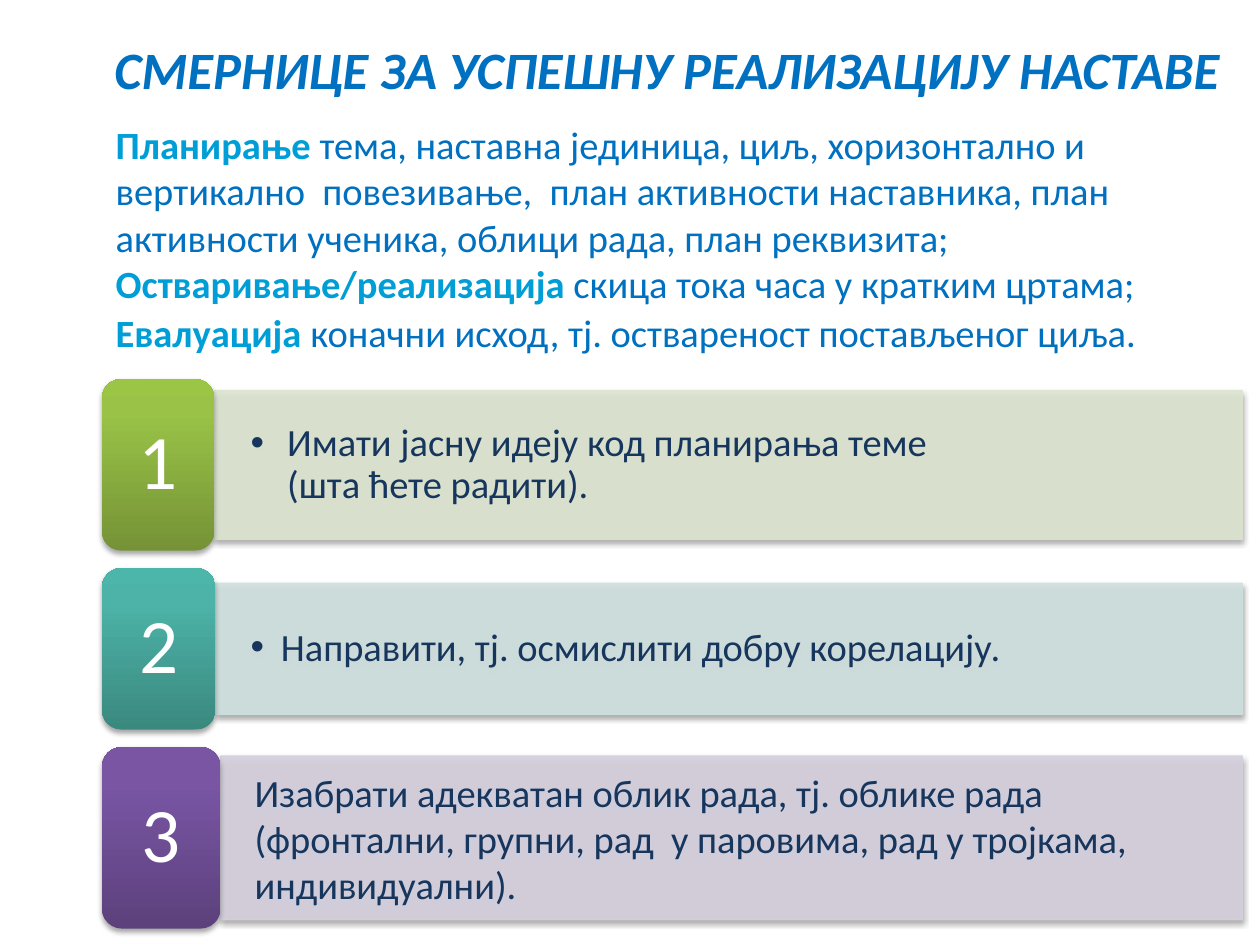
from lxml import etree
from pptx import Presentation
from pptx.dml.color import RGBColor
from pptx.enum.shapes import MSO_SHAPE
from pptx.enum.text import MSO_ANCHOR, PP_ALIGN
from pptx.oxml.ns import qn
from pptx.util import Inches, Pt

RECT = MSO_SHAPE.RECTANGLE
ROUNDED = MSO_SHAPE.ROUNDED_RECTANGLE
MIDDLE = MSO_ANCHOR.MIDDLE
LEFT = PP_ALIGN.LEFT
CENTER = PP_ALIGN.CENTER

BLUE, CYAN, NAVY, WHITE = "0070C0", "009ED6", "17365D", "FFFFFF"


def rgb(value):
    return RGBColor.from_string(value)


def add_xml(parent, tag, **attrs):
    return etree.SubElement(parent, qn(tag), {k: str(v) for k, v in attrs.items()})


class Deck:
    font = "Calibri"
    body_size = 22
    number_size = 44

    def __init__(self, width, height):
        self.prs = Presentation()
        self.prs.slide_width = Inches(width)
        self.prs.slide_height = Inches(height)
        self.s = self.prs.slides.add_slide(self.prs.slide_layouts[6])

    def frame(self, sp, inset_x, inset_y):
        tf = sp.text_frame
        tf.word_wrap = True
        tf.vertical_anchor = MIDDLE
        tf.margin_left = tf.margin_right = Inches(inset_x)
        tf.margin_top = tf.margin_bottom = Inches(inset_y)
        return tf

    def run(self, p, text, size, color, bold=False, italic=False):
        r = p.add_run()
        r.text = text
        r.font.name = self.font
        r.font.size = Pt(size)
        r.font.bold = bold
        r.font.italic = italic
        r.font.color.rgb = rgb(color)

    def bullet(self, p, margin, indent):
        pPr = p._p.get_or_add_pPr()
        pPr.set("marL", str(Inches(margin)))
        pPr.set("indent", str(Inches(indent)))
        add_xml(add_xml(pPr, "a:buClr"), "a:srgbClr", val=NAVY)
        add_xml(pPr, "a:buFont", typeface="Arial")
        add_xml(pPr, "a:buChar", char="•")

    def shadow(self, sp):
        sp.shadow.inherit = False
        effects = sp._element.spPr.find(qn("a:effectLst"))
        outer = add_xml(effects, "a:outerShdw", blurRad=Pt(3.1), dist=Pt(1.8),
                        dir=5400000, rotWithShape=0)
        self.alpha(add_xml(outer, "a:srgbClr", val="000000"), 35)

    def alpha(self, color, percent):
        add_xml(color, "a:alpha", val=percent * 1000)

    def text(self, x, y, w, h, runs):
        sp = self.s.shapes.add_textbox(Inches(x), Inches(y), Inches(w), Inches(h))
        p = self.frame(sp, 0.1, 0.05).paragraphs[0]
        for args in runs:
            self.run(p, *args)

    def bar(self, x, y, w, h, color, lines, hanging):
        sp = self.s.shapes.add_shape(RECT, Inches(x), Inches(y), Inches(w), Inches(h))
        sp.fill.solid()
        sp.fill.fore_color.rgb = rgb(color)
        sp.line.color.rgb = rgb(color)
        sp.line.width = Pt(0.75)
        for clr in sp._element.spPr.iter(qn("a:srgbClr")):
            self.alpha(clr, 90)
        self.shadow(sp)
        p = self.frame(sp, 0.27, 0.14).paragraphs[0]
        if hanging:
            self.bullet(p, *hanging)
            p.line_spacing = 0.9
        p.alignment = LEFT
        for i, line in enumerate(lines):
            if i:
                p.add_line_break()
            self.run(p, line, self.body_size, NAVY)

    def badge(self, x, y, w, h, colors, label):
        sp = self.s.shapes.add_shape(ROUNDED, Inches(x), Inches(y), Inches(w), Inches(h))
        sp.adjustments[0] = 0.167
        sp.fill.gradient()
        sp.fill.gradient_angle = 90
        stops = sp._element.spPr.find(".//" + qn("a:gsLst"))
        for stop in list(stops):
            stops.remove(stop)
        for position, color in zip((0, 80, 100), colors):
            add_xml(add_xml(stops, "a:gs", pos=position * 1000), "a:srgbClr", val=color)
        sp.line.fill.background()
        self.shadow(sp)
        p = self.frame(sp, 0.2, 0.1).paragraphs[0]
        p.alignment = CENTER
        p.line_spacing = 0.9
        self.run(p, label, self.number_size, WHITE)


def main():
    deck = Deck(10, 7.5)
    left, right = 0.81, 9.86
    guidelines = [
        (3.01, 1.36, 0.89, 1.18, "DDE5D0", ("759336", "99C247", "9BC545"),
         ["Имати јасну идеју код планирања теме ", "(шта ћете радити)."], (0.31, -0.29)),
        (4.51, 1.28, 0.9, 1.04, "D0E1DF", ("3A897F", "4DB3A8", "4CB6AA"),
         ["Направити, тј. осмислити добру корелацију."], (0.25, -0.24)),
        (5.93, 1.44, 0.94, 1.3, "D6D0DE", ("5C417C", "7955A4", "7955A6"),
         ["Изабрати адекватан облик рада, тј. облике рада (фронтални, групни, "
          "рад  у паровима, рад у тројкама, индивидуални)."], None),
    ]
    for number, row in enumerate(guidelines, 1):
        top, height, width, bar_height, tint, gradient, lines, hanging = row
        bar_left = left + width
        bar_top = top + (height - bar_height) / 2
        deck.bar(bar_left, bar_top, right - bar_left, bar_height, tint, lines, hanging)
        deck.badge(left, top, width, height, gradient, str(number))

    size = deck.body_size
    deck.text(0.82, 0.88, 9.02, 2.03, [
        ("Планирање ", size, CYAN, True),
        ("тема, наставна јединица, циљ, хоризонтално и вертикално  повезивање,  "
         "план активности наставника, план активности ученика, облици рада, "
         "план реквизита; ", size, BLUE),
        ("Oстваривање/реализација ", size, CYAN, True),
        ("скица тока часа у кратким цртама; ", size, BLUE),
        ("Eвалуација", size, CYAN, True),
        (" коначни исход, тј. оствареност постављеног циља.", size, BLUE),
        (" ", 24, CYAN),
    ])
    deck.text(0.81, 0.3, 9.09, 0.48, [
        ("СМЕРНИЦЕ ЗА УСПЕШНУ РЕАЛИЗАЦИЈУ НАСТАВЕ", 30, BLUE, True, True),
    ])
    deck.prs.save("out.pptx")


if __name__ == "__main__":
    main()
